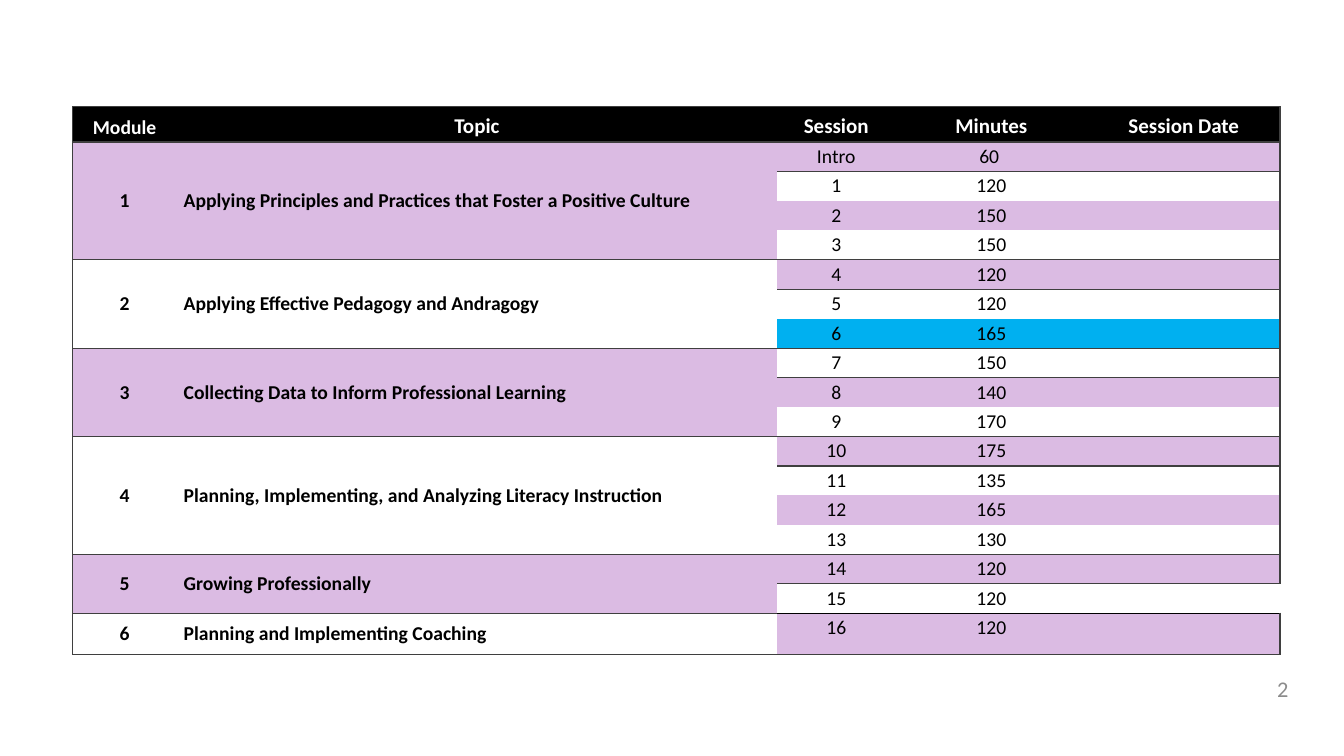
"""Build the slide that lists modules, topics and sessions in one table."""
from dataclasses import dataclass

from lxml.etree import SubElement
from pptx import Presentation
from pptx.dml.color import RGBColor as Rgb
from pptx.enum.text import MSO_ANCHOR as Anchor, PP_ALIGN as Align
from pptx.oxml.ns import qn
from pptx.util import Cm, Pt

HEADS = ["Module", "Topic", "Session", "Minutes", "Session Date"]
MODULES = [
    ("Applying Principles and Practices that Foster a Positive Culture",
     [("Intro", "60 "), ("1", "120"), ("2", "150"), ("3", "150")]),
    ("Applying Effective Pedagogy and Andragogy",
     [("4", "120"), ("5", "120"), ("6", "165")]),
    ("Collecting Data to Inform Professional Learning",
     [("7", "150"), ("8", "140"), ("9", "170")]),
    ("Planning, Implementing, and Analyzing Literacy Instruction",
     [("10", "175"), ("11", "135"), ("12", "165"), ("13", "130")]),
    ("Growing Professionally",
     [("14", "120"), ("15", "120")]),
    ("Planning and Implementing Coaching",
     [("16", "120")]),
]
PAGE = "2"
MARKED = "6"
OPEN = "15"
WIDTHS = [2.62, 15.14, 2.97, 4.85, 4.85]
HEAD_H, ROW_H, LAST_H = 0.89, 0.74, 1.04
STYLE = "{2D5ABB26-0587-4C30-8999-92F81FD0307C}"


@dataclass(frozen=True)
class Theme:
    """Colours, font and type sizes."""
    font: str = "Calibri"
    black: str = "000000"
    white: str = "FFFFFF"
    lilac: str = "DBBBE3"
    blue: str = "00B0F0"
    rule: str = "3F3F3F"
    gray: str = "8C8C8C"
    body: int = 14
    head: int = 15
    page: int = 16


THEME = Theme()


def write(frame, text, size, color, bold=False, align=Align.CENTER):
    """Put one run of text in a frame."""
    para = frame.paragraphs[0]
    para.alignment = align
    if text:
        run = para.add_run()
        run.text = text
        font = run.font
        font.name, font.size, font.bold = THEME.font, Pt(size), bold
        font.color.rgb = Rgb.from_string(color)
    else:
        SubElement(para._p, qn("a:endParaRPr"), sz=str(size * 100))


def dress(cell, fill, edges, pad=(0.15, 0.07), anchor=Anchor.TOP):
    """Give a cell its borders, fill, margins and anchor."""
    cell.margin_left = cell.margin_right = Cm(pad[0])
    cell.margin_top = cell.margin_bottom = Cm(pad[1])
    cell.vertical_anchor = anchor
    props = cell._tc.get_or_add_tcPr()
    for side in "LRTB":
        if side in edges:
            line = SubElement(props, qn(f"a:ln{side}"), w=str(Pt(1)))
            paint = SubElement(line, qn("a:solidFill"))
            SubElement(paint, qn("a:srgbClr"), val=edges[side])
    cell.fill.solid()
    cell.fill.fore_color.rgb = Rgb.from_string(fill)


def border(col, first, last, name=""):
    """Work out which sides of a cell carry a line."""
    edges = {}
    if col == 0:
        edges["L"] = THEME.rule
    if col == len(HEADS) - 1 and name != OPEN:
        edges["R"] = THEME.rule
    if first:
        edges["T"] = THEME.black if name == "16" and col > 1 else THEME.rule
    if last:
        edges["B"] = THEME.black if name == OPEN and col > 1 else THEME.rule
    return edges


def add_grid(slide):
    """Draw the table of modules."""
    count = sum(len(rows) for _, rows in MODULES)
    heights = [HEAD_H] + [ROW_H] * (count - 1) + [LAST_H]
    shape = slide.shapes.add_table(count + 1, len(HEADS), Cm(1.83), Cm(2.69),
                                   Cm(sum(WIDTHS)), Cm(sum(heights)))
    grid = shape.table
    grid.first_row = grid.horz_banding = False
    grid._tbl.tblPr.find(qn("a:tableStyleId")).text = STYLE
    for part, width in zip(grid.columns, WIDTHS):
        part.width = Cm(width)
    for part, height in zip(grid.rows, heights):
        part.height = Cm(height)

    for col, label in enumerate(HEADS):
        cell = grid.cell(0, col)
        dress(cell, THEME.black, border(col, True, True), anchor=Anchor.BOTTOM)
        size = THEME.head if col else THEME.body
        write(cell.text_frame, label, size, THEME.white, True)

    row = 1
    for num, (topic, rows) in enumerate(MODULES, 1):
        tint = THEME.lilac if num % 2 else THEME.white
        end = row + len(rows) - 1
        if end > row:
            for col in (0, 1):
                grid.cell(row, col).merge(grid.cell(end, col))
        for step, (name, mins) in enumerate(rows):
            first, last = step == 0, row == end
            band = THEME.lilac if row % 2 else THEME.white
            if name == MARKED:
                band = THEME.blue
            lead = (str(num), topic) if first else ("", "")
            for col, text in enumerate((*lead, name, mins, "")):
                cell = grid.cell(row, col)
                side = col < 2
                edges = border(col, first, last or (side and first), name)
                if side:
                    pad = (0.18, 0.07 * col)
                    dress(cell, tint, edges, pad, Anchor.MIDDLE)
                else:
                    dress(cell, band, edges)
                align = Align.LEFT if col == 1 else Align.CENTER
                write(cell.text_frame, text, THEME.body, THEME.black, side, align)
            row += 1


def add_page(slide):
    """Write the slide number."""
    box = slide.shapes.add_textbox(Cm(26.8), Cm(16.97), Cm(5.92), Cm(0.76))
    frame = box.text_frame
    frame.word_wrap = True
    frame.vertical_anchor = Anchor.MIDDLE
    write(frame, PAGE, THEME.page, THEME.gray, align=Align.RIGHT)


def main():
    """Make the deck and save it."""
    deck = Presentation()
    deck.slide_width, deck.slide_height = Cm(33.87), Cm(19.05)
    slide = deck.slides.add_slide(deck.slide_layouts[6])
    add_grid(slide)
    add_page(slide)
    deck.save("out.pptx")


if __name__ == "__main__":
    main()
